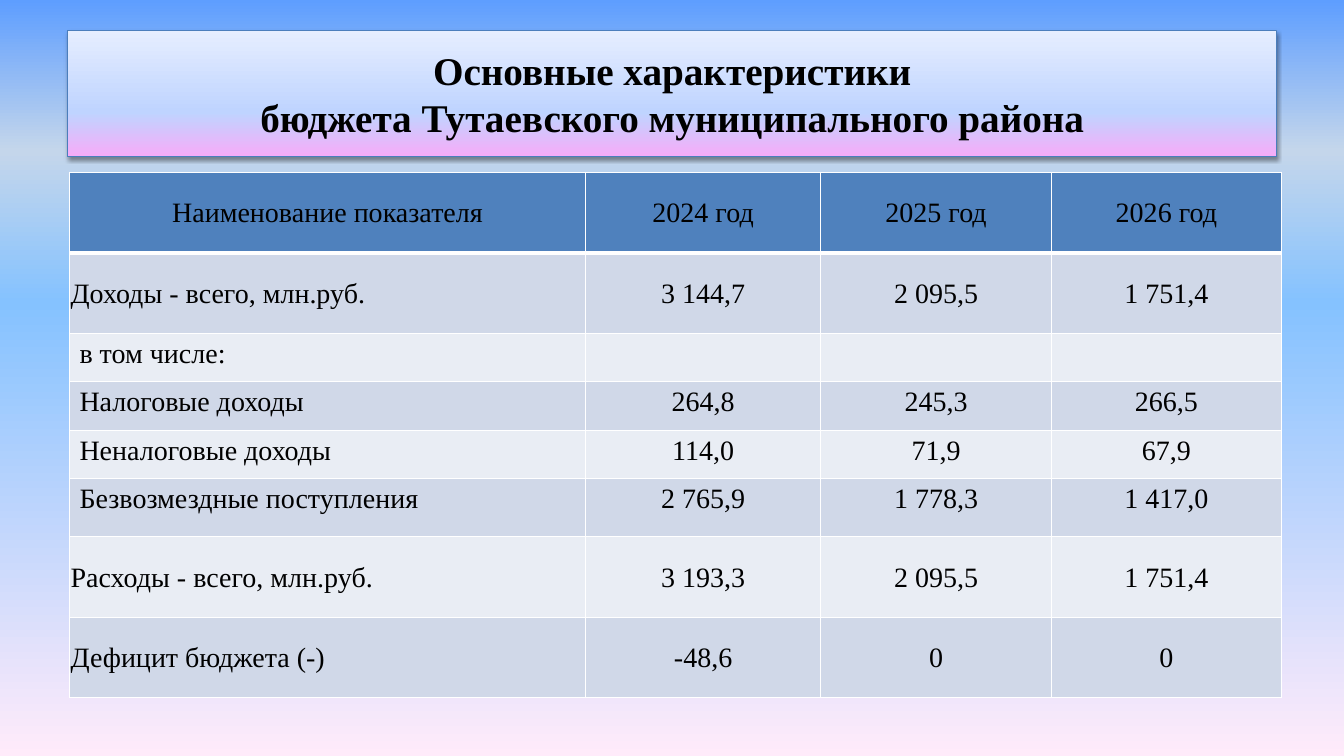
"""Build a slide with the main figures of a district budget."""
from lxml import etree
from pptx import Presentation
from pptx.dml.color import RGBColor
from pptx.enum.text import MSO_ANCHOR, MSO_AUTO_SIZE, PP_ALIGN
from pptx.oxml import parse_xml
from pptx.util import Cm, Pt

LEFT, CENTER = PP_ALIGN.LEFT, PP_ALIGN.CENTER
TOP, MIDDLE = MSO_ANCHOR.TOP, MSO_ANCHOR.MIDDLE
NO_AUTOFIT = MSO_AUTO_SIZE.NONE
TITLE_ONLY = 5
FONT = "Times New Roman"
DRAWING = "http://schemas.openxmlformats.org/drawingml/2006/main"

HEADER_FILL = "4F81BD"
BAND_FILLS = ["E9EDF4", "D0D8E8"]
PAGE_STOPS = [(0, "5E9EFF"), (20, "C4D6EB"), (40, "85C2FF"), (100, "FFEBFA")]
TITLE_STOPS = [(0, "F6ACF8"), (35, "BFD4FF"), (100, "E6EEFF")]

COLUMN_WIDTHS = [13.01, 5.92, 5.82, 5.79]
ROWS = [
    (2.03, ["Наименование показателя", "2024 год", "2025 год", "2026 год"]),
    (2.03, ["Доходы - всего, млн.руб.", "3 144,7", "2 095,5", "1 751,4"]),
    (1.22, ["в том числе:", "", "", ""]),
    (1.22, ["Налоговые доходы", "264,8", "245,3", "266,5"]),
    (1.22, ["Неналоговые доходы", "114,0", "71,9", "67,9"]),
    (1.47, ["Безвозмездные поступления", "2 765,9", "1 778,3", "1 417,0"]),
    (2.03, ["Расходы - всего, млн.руб.", "3 193,3", "2 095,5", "1 751,4"]),
    (2.03, ["Дефицит бюджета (-)", "-48,6", "0", "0"]),
]


def color(value):
    return RGBColor.from_string(value)


def write(frame, text, size=20, bold=False, align=CENTER):
    para = frame.paragraphs[0]
    para.text = text
    para.alignment = align
    for span in para.runs:
        span.font.name = FONT
        span.font.size = Pt(size)
        span.font.bold = bold
        span.font.color.rgb = color("000000")


deck = Presentation()
deck.slide_width, deck.slide_height = Cm(33.87), Cm(19.05)
page = deck.slides.add_slide(deck.slide_layouts[TITLE_ONLY])

title = page.shapes.title
title.left, title.top, title.width, title.height = Cm(1.7), Cm(0.76), Cm(30.48), Cm(3.18)
title.text_frame.auto_size = NO_AUTOFIT
title.text_frame.vertical_anchor = MIDDLE
write(title.text_frame, "Основные характеристики\vбюджета Тутаевского муниципального района",
      size=28, bold=True)

for owner, fill, angle, stops in [
    (page, page.background.fill, 270, PAGE_STOPS),
    (title, title.fill, 90, TITLE_STOPS),
]:
    fill.gradient()
    fill.gradient_angle = angle
    stop_list = owner.element.find(f".//{{{DRAWING}}}gsLst")
    for old_stop in list(stop_list):
        stop_list.remove(old_stop)
    for position, value in stops:
        stop = etree.SubElement(stop_list, f"{{{DRAWING}}}gs", pos=str(position * 1000))
        etree.SubElement(stop, f"{{{DRAWING}}}srgbClr", val=value)

title.line.color.rgb = color("4B7EBC")
title.line.width = Pt(0.75)
title.element.spPr.append(parse_xml(
    f'<a:effectLst xmlns:a="{DRAWING}">'
    f'<a:outerShdw blurRad="{Pt(3.1)}" dist="{Pt(1.6)}" dir="5400000" rotWithShape="0">'
    '<a:srgbClr val="000000"><a:alpha val="38000"/></a:srgbClr>'
    '</a:outerShdw></a:effectLst>'))

budget = page.shapes.add_table(
    len(ROWS), len(COLUMN_WIDTHS), Cm(1.75), Cm(4.34),
    Cm(sum(COLUMN_WIDTHS)), Cm(sum(height for height, _ in ROWS))).table
for column, width in zip(budget.columns, COLUMN_WIDTHS):
    column.width = Cm(width)

for row_index, (height, texts) in enumerate(ROWS):
    budget.rows[row_index].height = Cm(height)
    is_header = row_index == 0
    is_total = height > 2
    for column_index, text in enumerate(texts):
        cell = budget.cell(row_index, column_index)
        cell.fill.solid()
        cell.fill.fore_color.rgb = color(HEADER_FILL if is_header else BAND_FILLS[row_index % 2])
        if is_total:
            cell.margin_left = cell.margin_right = cell.margin_top = Cm(0.03)
            cell.margin_bottom = 0
        cell.vertical_anchor = MIDDLE if is_total else TOP
        write(cell.text_frame, text, align=CENTER if is_header or column_index else LEFT)
        for place, side in enumerate("LRTB"):
            thick = (is_header and side == "B") or (row_index == 1 and side == "T")
            cell._tc.tcPr.insert(place, parse_xml(
                f'<a:ln{side} xmlns:a="{DRAWING}" w="{Pt(3 if thick else 1)}">'
                f'<a:solidFill><a:srgbClr val="FFFFFF"/></a:solidFill></a:ln{side}>'))

deck.save("out.pptx")
